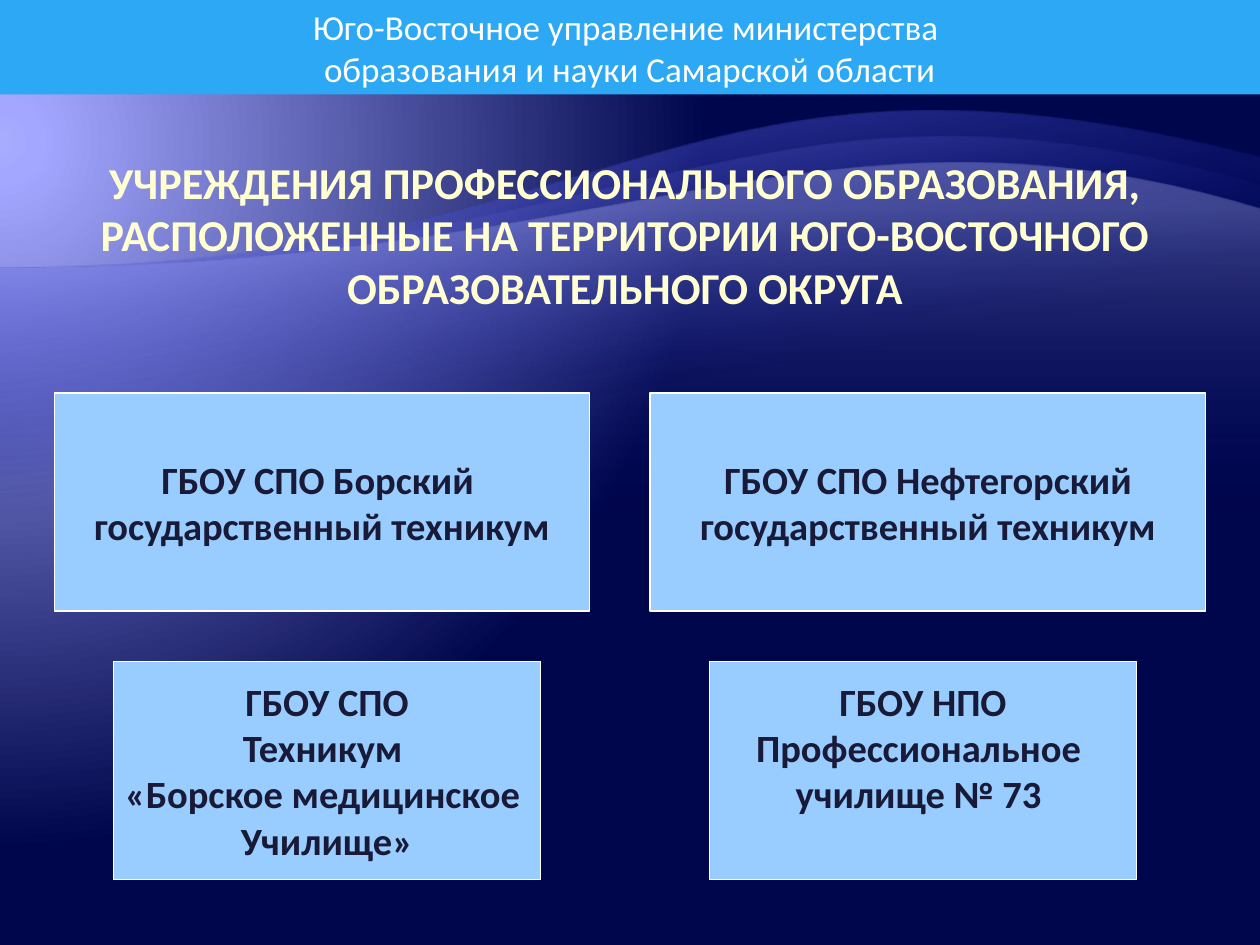
from lxml.etree import SubElement
from pptx import Presentation
from pptx.dml.color import RGBColor
from pptx.enum.shapes import MSO_SHAPE
from pptx.enum.text import MSO_ANCHOR, MSO_AUTO_SIZE, PP_ALIGN
from pptx.oxml.ns import qn
from pptx.util import Inches, Pt

COLORS = {
    "glow": "A8ACFF", "lilac": "A3A7FF", "night": "00064B",
    "wave": "000D9E", "violet": "797FFF", "pale": "C1C4FF",
    "cream": "FFFFD2", "band": "2CA8F4", "card": "99CCFF",
    "white": "FFFFFF", "ink": "181A37",
}


def make_gradient(solid, stops):
    """Replace a solid fill by a gradient of (percent, colour, opacity) stops."""
    gradient = solid.makeelement(qn("a:gradFill"), {"rotWithShape": "1"})
    stop_list = SubElement(gradient, qn("a:gsLst"))
    for position, color, opacity in stops:
        stop = SubElement(stop_list, qn("a:gs"), pos=str(position * 1000))
        rgb = SubElement(stop, qn("a:srgbClr"), val=COLORS[color])
        if opacity < 100:
            SubElement(rgb, qn("a:alpha"), val=str(opacity * 1000))
    solid.getparent().replace(solid, gradient)
    return gradient


def add_box(left, top, width, height, fill, lines, size, color, bold):
    box = slide.shapes.add_shape(MSO_SHAPE.RECTANGLE, Inches(left), Inches(top),
                                 Inches(width), Inches(height))
    box.shadow.inherit = False
    box.fill.solid()
    box.fill.fore_color.rgb = RGBColor.from_string(COLORS[fill])
    box.line.fill.background()
    frame = box.text_frame
    frame.text = "\n".join(lines)
    frame.word_wrap = False
    frame.vertical_anchor = MSO_ANCHOR.MIDDLE
    for paragraph in frame.paragraphs:
        paragraph.alignment = PP_ALIGN.CENTER
        font = paragraph.runs[0].font
        font.name, font.size, font.bold = "Calibri", Pt(size), bold
        font.color.rgb = RGBColor.from_string(COLORS[color])
    return box


prs = Presentation()
prs.slide_width, prs.slide_height = Inches(10), Inches(7.5)
slide = prs.slides.add_slide(prs.slide_layouts[5])

# Background glow from the upper left
slide.background.fill.solid()
backdrop = make_gradient(
    slide._element.xpath("./p:cSld/p:bg/p:bgPr/a:solidFill")[0],
    [(0, "glow", 100), (5, "lilac", 100), (100, "night", 100)])
# The dark end is reached before the rim
backdrop.find(qn("a:gsLst"))[-1].set("pos", "90000")
glow = SubElement(backdrop, qn("a:path"), {"path": "circle"})
SubElement(glow, qn("a:fillToRect"), l="20000", t="30000", r="135000", b="100000")

# Waves: right end, bottom, two curve controls, gradient start, angle, crest
waves = [
    (1.25, 7.33, (5, 2.13), (5.34, 0.05), 65, 260, ("violet", 55)),
    (1.47, 6.37, (5, 2.13), (5.98, 0.31), 65, 260, ("lilac", 30)),
    (1.66, 5.42, (5, 2.13), (6.54, 0.61), 35, 270, ("pale", 30)),
]
for right_top, bottom, control_1, control_2, start, angle, crest in waves:
    builder = slide.shapes.build_freeform(Inches(10), Inches(bottom))
    builder.add_line_segments([(Inches(0), Inches(bottom)), (Inches(0), Inches(2.13)),
                               (Inches(10), Inches(right_top))], close=True)
    wave = builder.convert_to_shape()
    wave.shadow.inherit = False
    wave.line.fill.background()
    wave.fill.solid()
    # Bend the upper edge
    edge = wave._element.xpath(".//a:lnTo")[2]
    curve = edge.makeelement(qn("a:cubicBezTo"))
    for x, y in (control_1, control_2, (10, right_top)):
        SubElement(curve, qn("a:pt"), x=str(Inches(x)), y=str(Inches(y) - Inches(right_top)))
    edge.getparent().replace(edge, curve)
    gradient = make_gradient(wave._element.spPr.find(qn("a:solidFill")),
                             [(start, "wave", 0), (100, *crest)])
    SubElement(gradient, qn("a:lin"), ang=str(angle * 60000), scaled="0")

# Title, in front of the waves
title = slide.shapes.title
slide.shapes._spTree.append(title._element)
title.left, title.top = Inches(0.59), Inches(1.23)
title.width, title.height = Inches(8.74), Inches(1.26)
heading = title.text_frame
heading.text = ("УЧРЕЖДЕНИЯ ПРОФЕССИОНАЛЬНОГО ОБРАЗОВАНИЯ, РАСПОЛОЖЕННЫЕ "
                "НА ТЕРРИТОРИИ ЮГО-ВОСТОЧНОГО ОБРАЗОВАТЕЛЬНОГО ОКРУГА")
heading.word_wrap = True
heading.auto_size = MSO_AUTO_SIZE.NONE
heading.vertical_anchor = MSO_ANCHOR.MIDDLE
heading.margin_left = heading.margin_right = Inches(0)
heading.margin_top = heading.margin_bottom = Inches(0)
heading.paragraphs[0].alignment = PP_ALIGN.CENTER
heading_font = heading.paragraphs[0].runs[0].font
heading_font.name, heading_font.size, heading_font.bold = "Calibri", Pt(25.2), True
heading_font.color.rgb = RGBColor.from_string(COLORS["cream"])

# Header band
add_box(0, 0, 10, 0.75, "band",
        ["Юго-Восточное управление министерства ",
         "образования и науки Самарской области"], 20, "white", False)

# Institutions: left, top, width, bottom margin, lines
institutions = [
    (0.43, 3.12, 4.25, 0.05, ["ГБОУ СПО Борский ", "государственный техникум"]),
    (5.16, 3.12, 4.41, 0.05, ["ГБОУ СПО Нефтегорский", "государственный техникум"]),
    (0.9, 5.25, 3.39, 0.05, ["ГБОУ СПО", "Техникум ", "«Борское медицинское ", "Училище»"]),
    (5.63, 5.25, 3.39, 0.42, ["ГБОУ НПО", "Профессиональное ", "училище № 73 "]),
]
for left, top, width, bottom_margin, lines in institutions:
    card = add_box(left, top, width, 1.73, "card", lines, 22, "ink", True)
    card.line.color.rgb = RGBColor.from_string(COLORS["white"])
    card.line.width = Pt(0.75)
    card.text_frame.margin_bottom = Inches(bottom_margin)

prs.save("out.pptx")
